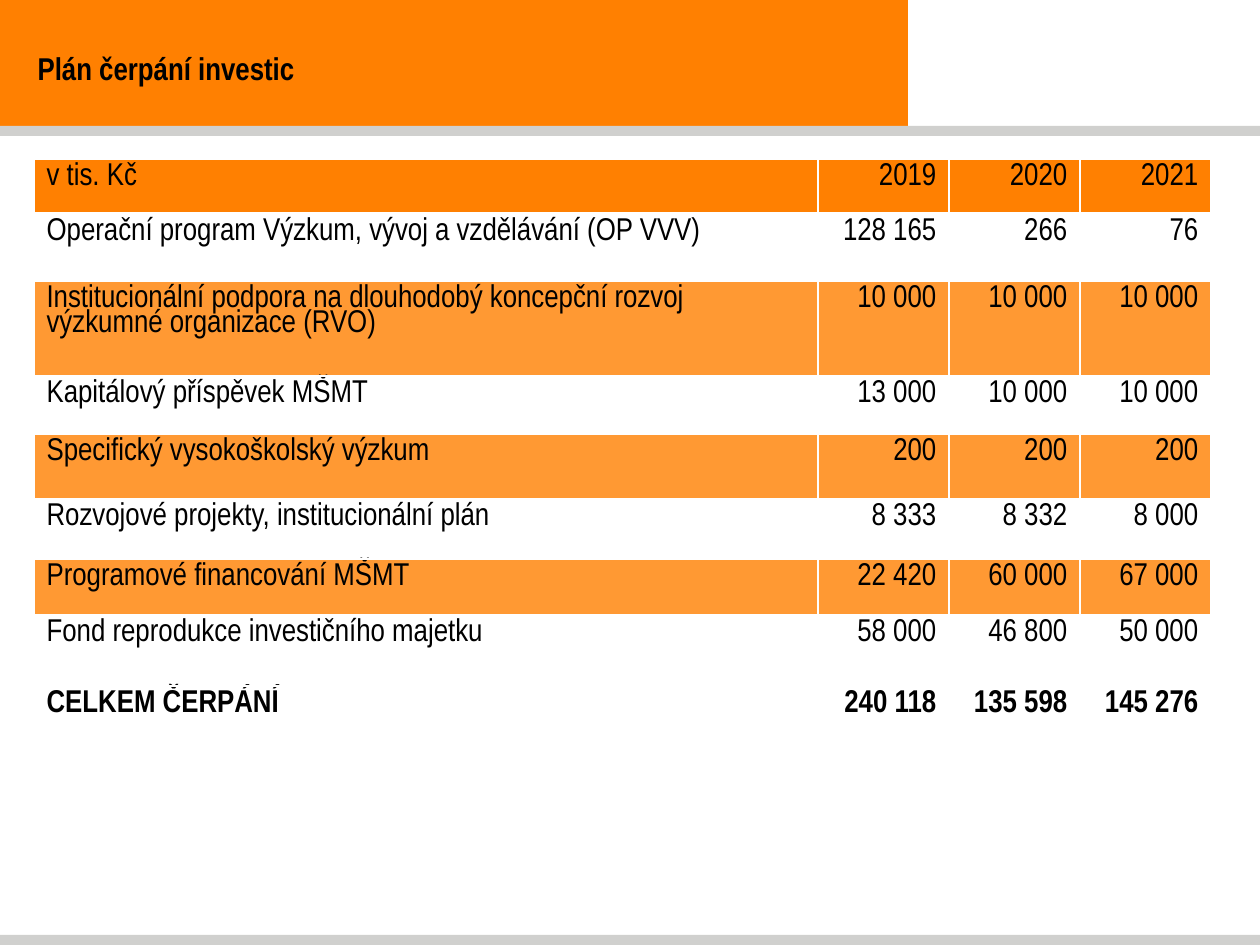
"""Build the investment spending plan slide with its yearly table."""
from dataclasses import dataclass
from typing import Any

from lxml import etree
from pptx import Presentation
from pptx import util as u
from pptx.dml.color import RGBColor
from pptx.enum import shapes, text
from pptx.oxml.ns import qn

SCALE = 914400 / 126
ORANGE = RGBColor(0xFF, 0x80, 0x01)
LIGHT_ORANGE = RGBColor(0xFF, 0x99, 0x33)
GREY = RGBColor(0xD0, 0xD0, 0xCE)
WHITE = RGBColor(0xFF, 0xFF, 0xFF)
BLACK = RGBColor(0, 0, 0)
FONT = "Arial Narrow"


@dataclass(frozen=True)
class Bar:
    left: int
    top: int
    width: int
    height: int
    color: RGBColor


@dataclass(frozen=True)
class Row:
    height: int
    label: str
    values: tuple[str, str, str]
    fill: RGBColor = WHITE
    bold: bool = False


BARS = [
    Bar(0, 0, 908, 126, ORANGE),
    Bar(0, 935, 1260, 10, GREY),
    Bar(0, 126, 1260, 10, GREY),
]
COLUMNS = [784, 131, 131, 131]
ROWS = [
    Row(55, "v tis. Kč", ("2019", "2020", "2021"), ORANGE),
    Row(67, "Operační program Výzkum, vývoj a vzdělávání (OP VVV)", ("128 165", "266", "76")),
    Row(95, "Institucionální podpora na dlouhodobý koncepční rozvoj výzkumné organizace (RVO)",
        ("10 000", "10 000", "10 000"), LIGHT_ORANGE),
    Row(58, "Kapitálový příspěvek MŠMT", ("13 000", "10 000", "10 000")),
    Row(65, "Specifický vysokoškolský výzkum", ("200", "200", "200"), LIGHT_ORANGE),
    Row(60, "Rozvojové projekty, institucionální plán", ("8 333", "8 332", "8 000")),
    Row(56, "Programové financování MŠMT", ("22 420", "60 000", "67 000"), LIGHT_ORANGE),
    Row(71, "Fond reprodukce investičního majetku", ("58 000", "46 800", "50 000")),
    Row(76, "CELKEM ČERPÁNÍ", ("240 118", "135 598", "145 276"), bold=True),
]


def px(n: int) -> u.Emu:
    """Convert px to EMU."""
    return u.Emu(round(n * SCALE))


def set_all(obj: Any, values: dict[str, Any]) -> None:
    """Set every attribute in values on obj."""
    for name, value in values.items():
        setattr(obj, name, value)


def style_font(font: Any, bold: bool) -> None:
    """Apply the slide's text style."""
    set_all(font, {"name": FONT, "size": u.Pt(18), "bold": bold})
    font.color.rgb = BLACK


def draw_bar(slide: Any, bar: Bar) -> None:
    """Draw one plain colour bar."""
    sp = slide.shapes.add_shape(shapes.MSO_SHAPE.RECTANGLE, px(bar.left), px(bar.top),
                                px(bar.width), px(bar.height))
    sp.shadow.inherit = False
    sp.fill.solid()
    sp.fill.fore_color.rgb = bar.color
    sp.line.fill.background()


def draw_title(slide: Any, title: str) -> None:
    """Place the title above the bars and format it."""
    sp = slide.shapes.title
    slide.shapes.element.append(sp.element)
    set_all(sp, {"left": px(0), "top": px(39), "width": px(908), "height": px(57)})
    tf = sp.text_frame
    set_all(tf, {"text": title, "word_wrap": True,
                 "vertical_anchor": text.MSO_ANCHOR.MIDDLE})
    p = tf.paragraphs[0]
    p.alignment = text.PP_ALIGN.JUSTIFY
    p._p.get_or_add_pPr().set("marL", str(px(25)))
    style_font(p.runs[0].font, True)


def set_borders(cell: Any, bottom_pt: int, top_pt: int) -> None:
    """Give a cell white borders."""
    tc_pr = cell._tc.get_or_add_tcPr()
    widths = {"a:lnL": 1, "a:lnR": 1, "a:lnT": top_pt, "a:lnB": bottom_pt}
    for i, (tag, width) in enumerate(widths.items()):
        ln = etree.Element(qn(tag), w=str(u.Pt(width)))
        fill = etree.SubElement(ln, qn("a:solidFill"))
        etree.SubElement(fill, qn("a:srgbClr"), val=str(WHITE))
        tc_pr.insert(i, ln)


def draw_table(slide: Any, rows: list[Row]) -> None:
    """Draw the spending table."""
    height = sum(row.height for row in rows)
    table = slide.shapes.add_table(len(rows), len(COLUMNS), px(34), px(159),
                                   px(sum(COLUMNS)), px(height)).table
    for column, width in zip(table.columns, COLUMNS):
        column.width = px(width)
    for i, row in enumerate(rows):
        table.rows[i].height = px(row.height)
        for j, value in enumerate((row.label, *row.values)):
            cell = table.cell(i, j)
            cell.text = value
            cell.fill.solid()
            cell.fill.fore_color.rgb = row.fill
            set_borders(cell, 3 if i == 0 else 1, 3 if i == 1 else 1)
            p = cell.text_frame.paragraphs[0]
            set_all(p, {"line_spacing": 0.85,
                        "alignment": text.PP_ALIGN.RIGHT if j else text.PP_ALIGN.LEFT})
            style_font(p.runs[0].font, row.bold)


def main() -> None:
    """Build and save the slide."""
    prs = Presentation()
    set_all(prs, {"slide_width": px(1260), "slide_height": px(945)})
    s = prs.slides.add_slide(prs.slide_layouts[5])
    for bar in BARS:
        draw_bar(s, bar)
    draw_table(s, ROWS)
    draw_title(s, "Plán čerpání investic")
    prs.save("out.pptx")


if __name__ == "__main__":
    main()
